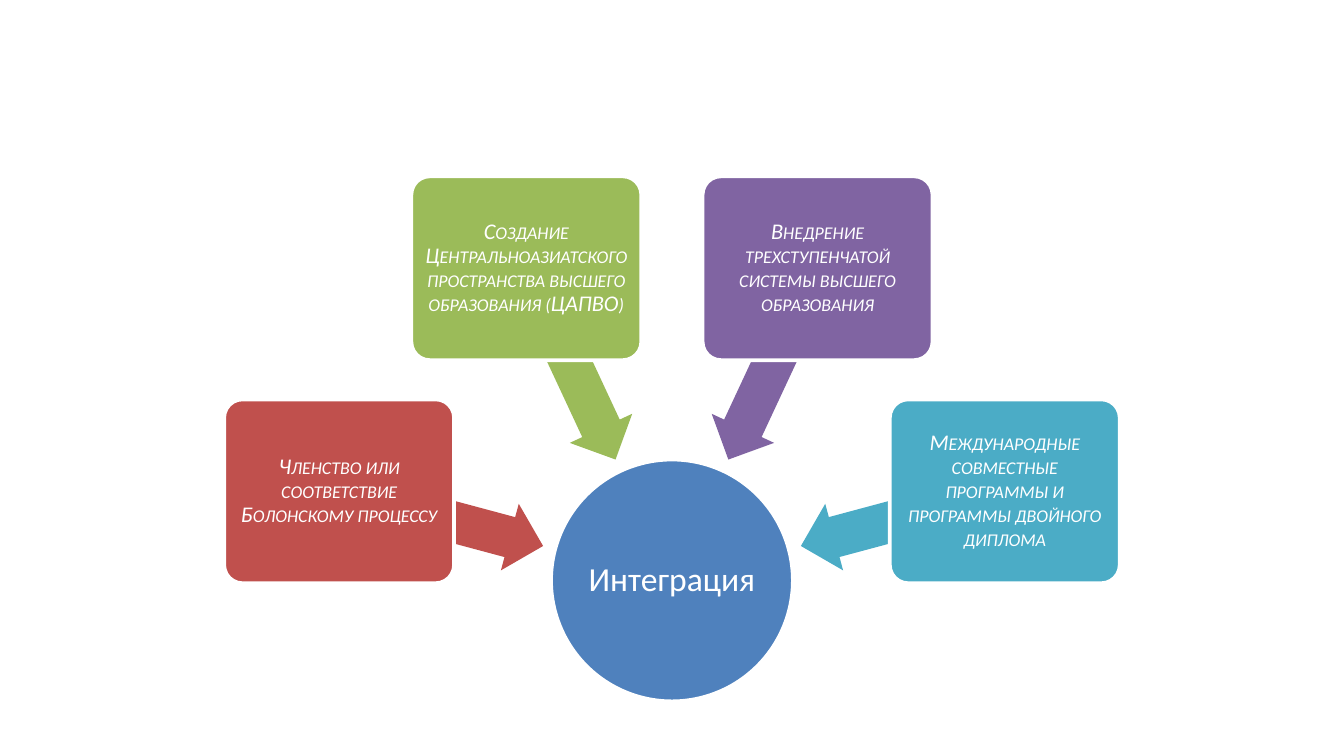
from math import cos, radians, sin

from pptx import Presentation
from pptx.dml.color import RGBColor
from pptx.enum.shapes import MSO_SHAPE
from pptx.enum.text import MSO_ANCHOR, PP_ALIGN
from pptx.util import Pt

OVAL = MSO_SHAPE.OVAL
ROUND_RECT = MSO_SHAPE.ROUNDED_RECTANGLE
LEFT_ARROW = MSO_SHAPE.LEFT_ARROW
MIDDLE = MSO_ANCHOR.MIDDLE
CENTER = PP_ALIGN.CENTER

COLORS = {
    "white": "FFFFFF",
    "blue": "4F81BD",
    "red": "C0504D",
    "green": "9BBB59",
    "purple": "8064A2",
    "teal": "4BACC6",
}

HUB_X, HUB_Y, HUB_SIZE = 360, 311, 129.6
BOX_W, BOX_H, BOX_RADIUS = 123.2, 98.5, 184.6
ARROW_W, ARROW_H, ARROW_RADIUS = 113, 36.9, 128
FIRST_ANGLE, ANGLE_STEP = 195, 50

TOPICS = [
    ("Членство или соответствие Болонскому процессу", "red"),
    ("Создание Центральноазиатского пространства высшего образования (ЦАПВО)", "green"),
    ("Внедрение трехступенчатой системы высшего образования", "purple"),
    ("Международные совместные программы и программы двойного диплома", "teal"),
]


def rgb(name):
    return RGBColor.from_string(COLORS[name])


def around_hub(angle, radius):
    """Return the point at this angle, clockwise from the right of the hub."""
    return (HUB_X + radius * cos(radians(angle)),
            HUB_Y + radius * sin(radians(angle)))


def add_centered(s, kind, center, w, h, color, outlined=True):
    """Add a filled shape placed by its centre point."""
    x, y = center
    sp = s.shapes.add_shape(kind, Pt(x - w / 2), Pt(y - h / 2), Pt(w), Pt(h))
    sp.shadow.inherit = False
    sp.fill.solid()
    sp.fill.fore_color.rgb = rgb(color)
    if outlined:
        sp.line.color.rgb = rgb("white")
        sp.line.width = Pt(2)
    else:
        sp.line.fill.background()
    return sp


def add_label(sp, text, size, margin):
    tf = sp.text_frame
    tf.word_wrap = True
    tf.vertical_anchor = MIDDLE
    tf.margin_left = tf.margin_right = Pt(margin)
    tf.margin_top = tf.margin_bottom = Pt(margin)
    p = tf.paragraphs[0]
    p.alignment = CENTER
    p.line_spacing = 0.9
    r = p.add_run()
    r.text = text
    r.font.name = "Calibri"
    r.font.size = Pt(size)
    r.font.color.rgb = rgb("white")
    return r


def add_hub(s, text):
    sp = add_centered(s, OVAL, (HUB_X, HUB_Y), HUB_SIZE, HUB_SIZE, "blue")
    add_label(sp, text, 18, 0.7)


def add_arrow(s, angle, color):
    sp = add_centered(s, LEFT_ARROW, around_hub(angle, ARROW_RADIUS),
                      ARROW_W, ARROW_H, color, outlined=False)
    sp.adjustments[0] = 0.6
    sp.adjustments[1] = 0.5
    sp.rotation = angle


def add_topic(s, angle, text, color):
    sp = add_centered(s, ROUND_RECT, around_hub(angle, BOX_RADIUS),
                      BOX_W, BOX_H, color)
    sp.adjustments[0] = 0.1
    r = add_label(sp, text, 12, 2.1)
    r.font.italic = True
    r.font._element.set("cap", "small")


def main():
    prs = Presentation()
    prs.slide_width, prs.slide_height = Pt(720), Pt(405)
    s = prs.slides.add_slide(prs.slide_layouts[6])
    add_hub(s, "Интеграция")
    for i, (text, color) in enumerate(TOPICS):
        angle = FIRST_ANGLE + i * ANGLE_STEP
        add_arrow(s, angle, color)
        add_topic(s, angle, text, color)
    prs.save("out.pptx")


if __name__ == "__main__":
    main()
